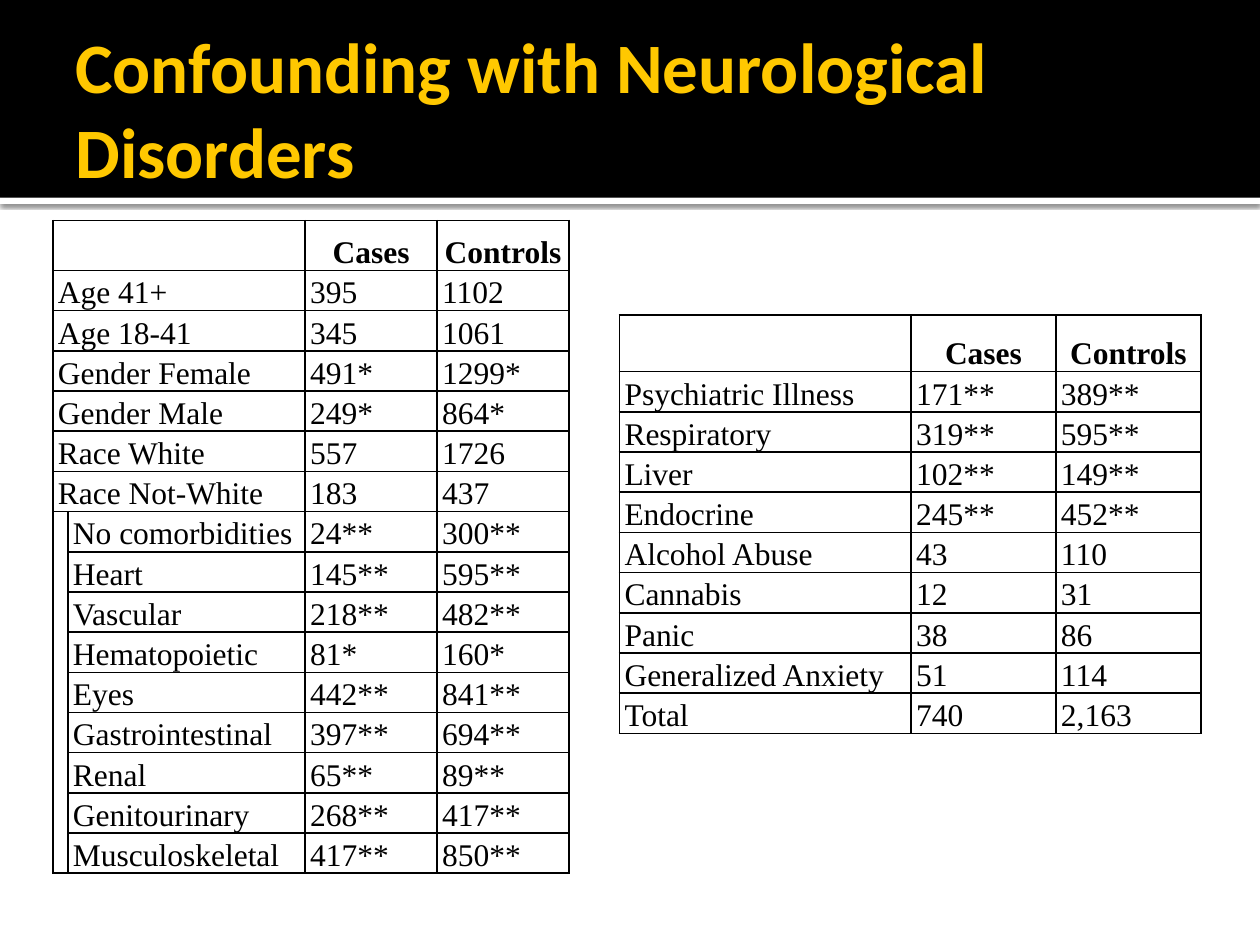
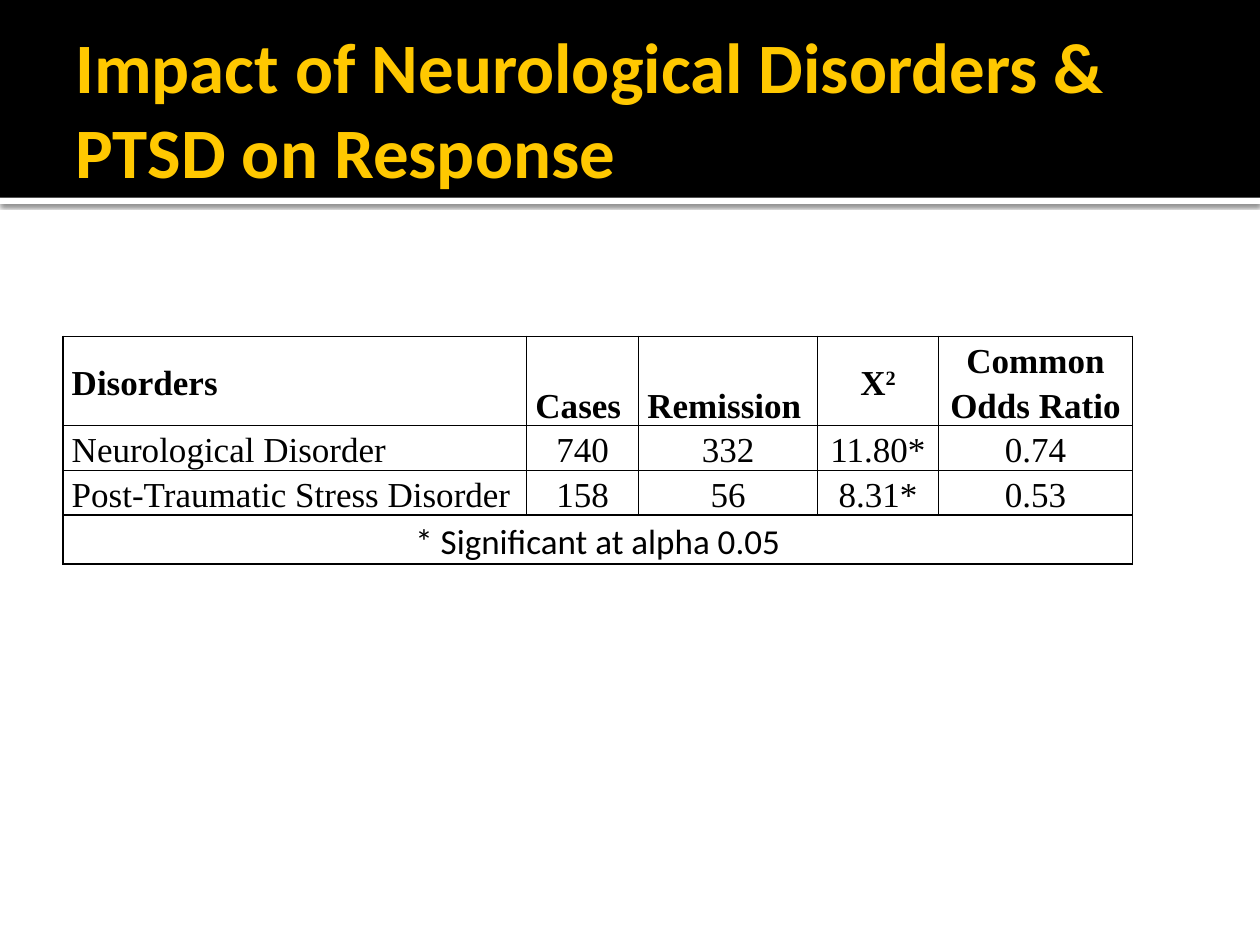
import pptx
import pptx.dml.color
import pptx.enum.shapes
import pptx.enum.text
import pptx.oxml
import pptx.oxml.ns
import pptx.util

Pt = pptx.util.Pt
ALIGN = pptx.enum.text.PP_ALIGN
ANCHOR = pptx.enum.text.MSO_ANCHOR

BLACK, WHITE, GOLD = "000000", "FFFFFF", "FFC800"
SERIF, SANS = "Times New Roman", "Calibri"
PAGE_WIDTH, PAGE_HEIGHT = 720, 540
BAND_HEIGHT, STRIPE_HEIGHT = 113, 3.6
COUNT_LINE, RESPONSE_LINE, NOTE_LINE = 22.92, 25.5, 28
HEADINGS = ("Cases", "Controls")

DEMOGRAPHICS = [
    ("Age 41+", "395", "1102"),
    ("Age 18-41", "345", "1061"),
    ("Gender Female", "491*", "1299*"),
    ("Gender Male", "249*", "864*"),
    ("Race White", "557", "1726"),
    ("Race Not-White", "183", "437"),
]
COMORBIDITIES = [
    ("No comorbidities", "24**", "300**"),
    ("Heart", "145**", "595**"),
    ("Vascular", "218**", "482**"),
    ("Hematopoietic", "81*", "160*"),
    ("Eyes", "442**", "841**"),
    ("Gastrointestinal", "397**", "694**"),
    ("Renal", "65**", "89**"),
    ("Genitourinary", "268**", "417**"),
    ("Musculoskeletal", "417**", "850**"),
]
OTHER_CONDITIONS = [
    ("Psychiatric Illness", "171**", "389**"),
    ("Respiratory", "319**", "595**"),
    ("Liver", "102**", "149**"),
    ("Endocrine", "245**", "452**"),
    ("Alcohol Abuse", "43", "110"),
    ("Cannabis", "12", "31"),
    ("Panic", "38", "86"),
    ("Generalized Anxiety", "51", "114"),
    ("Total", "740", "2,163"),
]
RESPONSE = [
    ("Disorders", "Cases", "Remission", "X^2", "Common Odds Ratio"),
    ("Neurological Disorder", "740", "332", "11.80*", "0.74"),
    ("Post-Traumatic Stress Disorder", "158", "56", "8.31*", "0.53"),
    ("* Significant at alpha 0.05", "", "", "", ""),
]


def colour(value):
    return pptx.dml.color.RGBColor.from_string(value)


def apply_format(target, **values):
    for name, value in values.items():
        setattr(target, name, value)


def add_span(para, text, size, font=SERIF, bold=False, shade=BLACK):
    span = para.add_run()
    span.text = text
    apply_format(span.font, size=Pt(size), name=font, bold=bold)
    span.font.color.rgb = colour(shade)
    return span


def add_bar(page, top, height, shade):
    bar = page.shapes.add_shape(pptx.enum.shapes.MSO_SHAPE.RECTANGLE,
                                0, Pt(top), Pt(PAGE_WIDTH), Pt(height))
    bar.fill.solid()
    bar.fill.fore_color.rgb = colour(shade)
    bar.line.fill.background()
    bar.shadow.inherit = False
    return bar


def add_drop_shadow(shape):
    effects = shape._element.spPr.find(pptx.oxml.ns.qn("a:effectLst"))
    effects.append(pptx.oxml.parse_xml(
        f'<a:outerShdw {pptx.oxml.ns.nsdecls("a")} blurRad="{Pt(2.5)}" dist="{Pt(0.8)}" '
        f'dir="5400000" rotWithShape="0"><a:srgbClr val="{BLACK}">'
        '<a:alpha val="60000"/></a:srgbClr></a:outerShdw>'))


def add_titled_page(deck, title):
    page = deck.slides.add_slide(deck.slide_layouts[6])
    add_drop_shadow(add_bar(page, BAND_HEIGHT, STRIPE_HEIGHT, WHITE))
    add_bar(page, 0, BAND_HEIGHT, BLACK)
    box = page.shapes.add_textbox(Pt(36), Pt(12), Pt(648), Pt(98.6))
    apply_format(box.text_frame, word_wrap=True, vertical_anchor=ANCHOR.MIDDLE,
                 margin_left=Pt(7.2), margin_right=Pt(3.6),
                 margin_top=Pt(3.6), margin_bottom=Pt(3.6))
    add_span(box.text_frame.paragraphs[0], title, 40.5, SANS, True, GOLD)
    return page


def add_borders(cell):
    properties = cell._tc.get_or_add_tcPr()
    for side in ("lnL", "lnR", "lnT", "lnB"):
        properties.append(pptx.oxml.parse_xml(
            f'<a:{side} {pptx.oxml.ns.nsdecls("a")} w="{Pt(1)}"><a:solidFill>'
            f'<a:srgbClr val="{BLACK}"/></a:solidFill></a:{side}>'))


def add_grid(page, left, top, widths, heights, margin):
    frame = page.shapes.add_table(len(heights), len(widths), Pt(left), Pt(top),
                                  Pt(sum(widths)), Pt(sum(heights)))
    table = frame.table
    apply_format(table, first_row=False, horz_banding=False)
    for column, width in zip(table.columns, widths):
        column.width = Pt(width)
    for row, height in zip(table.rows, heights):
        row.height = Pt(height)
    for cell in table.iter_cells():
        add_borders(cell)
        cell.fill.background()
        apply_format(cell, margin_left=Pt(margin), margin_right=Pt(margin),
                     margin_top=0, margin_bottom=0)
    return table


def write_cell(cell, text, size, line, align=ALIGN.LEFT, anchor=ANCHOR.TOP,
               bold=False, font=SERIF):
    cell.vertical_anchor = anchor
    para = cell.text_frame.paragraphs[0]
    apply_format(para, alignment=align, line_spacing=Pt(line))
    base, _, exponent = text.partition("^")
    if base:
        add_span(para, base, size, font, bold)
    if exponent:
        raised = add_span(para, exponent, size, font, bold)
        raised._r.get_or_add_rPr().set("baseline", "30000")


def add_count_table(page, left, top, widths, header_height, rows):
    blanks = ("",) * (len(widths) - len(HEADINGS))
    heights = [header_height] + [COUNT_LINE] * len(rows)
    table = add_grid(page, left, top, widths, heights, 2.9)
    for column, text in enumerate(blanks + HEADINGS):
        write_cell(table.cell(0, column), text, 18, COUNT_LINE,
                   ALIGN.CENTER, ANCHOR.BOTTOM, True)
    for row, texts in enumerate(rows, 1):
        for column, text in enumerate(texts):
            write_cell(table.cell(row, column), text, 18, COUNT_LINE)
    return table


def add_response_table(page):
    heights = [2 * RESPONSE_LINE, RESPONSE_LINE, RESPONSE_LINE, NOTE_LINE]
    table = add_grid(page, 36, 192.2, [265, 64, 102.3, 69, 111], heights, 5)
    note_row = len(RESPONSE) - 1
    for row, texts in enumerate(RESPONSE):
        for column, text in enumerate(texts):
            cell = table.cell(row, column)
            cell.fill.solid()
            cell.fill.fore_color.rgb = colour(WHITE)
            is_note = row == note_row
            is_left = not is_note and (column == 0 or row == 0 and column < 3)
            is_low = not is_note and column in (1, 2)
            write_cell(cell, text, 20, NOTE_LINE if is_note else RESPONSE_LINE,
                       align=ALIGN.LEFT if is_left else ALIGN.CENTER,
                       anchor=ANCHOR.BOTTOM if is_low else ANCHOR.MIDDLE,
                       bold=row == 0, font=SANS if is_note else SERIF)
    table.cell(note_row, 0).merge(table.cell(note_row, len(RESPONSE[0]) - 1))


def add_confounding_page(deck):
    page = add_titled_page(deck, "Confounding with Neurological Disorders")
    rows = [(label, "", *counts) for label, *counts in DEMOGRAPHICS]
    rows += [("", *entry) for entry in COMORBIDITIES]
    table = add_count_table(page, 30.2, 126, [8.3, 135.6, 75.4, 75.4], 28.6, rows)
    first_indented = len(DEMOGRAPHICS) + 1
    for row in range(first_indented):
        table.cell(row, 0).merge(table.cell(row, 1))
    table.cell(first_indented, 0).merge(table.cell(len(rows), 0))
    add_count_table(page, 354, 180, [166.6, 82.8, 82.8], 32.4, OTHER_CONDITIONS)


def add_response_page(deck):
    page = add_titled_page(deck, "Impact of Neurological Disorders & PTSD on Response")
    add_response_table(page)


def main():
    deck = pptx.Presentation()
    apply_format(deck, slide_width=Pt(PAGE_WIDTH), slide_height=Pt(PAGE_HEIGHT))
    add_confounding_page(deck)
    add_response_page(deck)
    deck.save("out.pptx")


if __name__ == "__main__":
    main()
